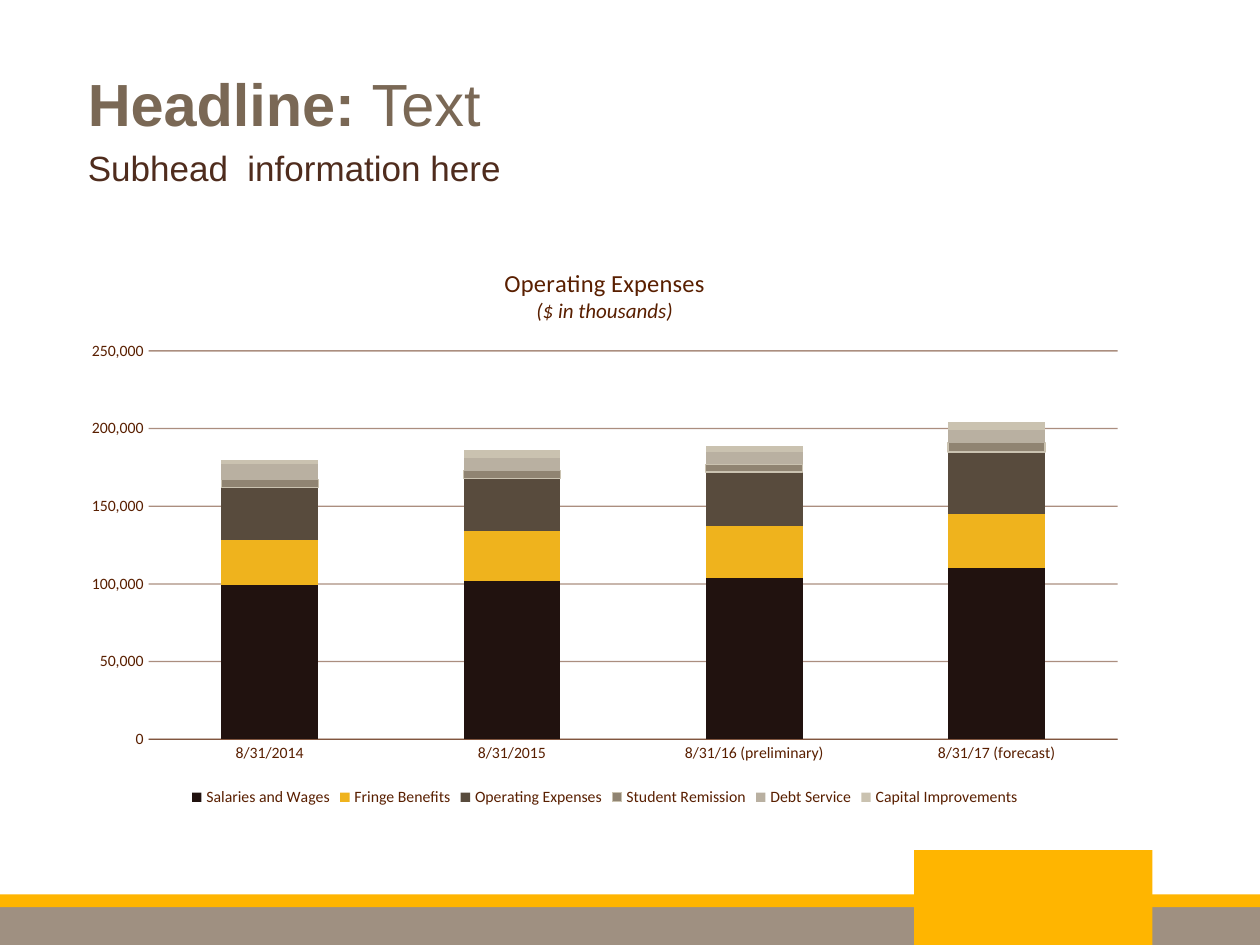
"""Build a slide with a stacked column chart of operating expenses."""
from dataclasses import dataclass
from typing import Any, Optional

import pptx
import pptx.chart.data
import pptx.dml.color
import pptx.enum.chart
import pptx.enum.shapes
import pptx.enum.text
import pptx.oxml
import pptx.oxml.ns
import pptx.util

Cm, Pt = pptx.util.Cm, pptx.util.Pt

COLORS = {
    "taupe": "9F9081", "gold": "FFB500", "headline": "7A6855", "subhead": "4F2C1D",
    "chart_text": "591F00", "espresso": "21120F", "amber": "EFB31D", "brown": "584B3D",
    "stone": "908472", "sand": "B9B0A1", "cream": "CAC2B0",
}


@dataclass
class Band:
    left: float
    top: float
    width: float
    height: float
    color: str


@dataclass
class Run:
    text: str
    size: float
    color: str
    name: str = "Arial"
    bold: bool = False
    italic: bool = False


@dataclass
class Series:
    name: str
    thousands: tuple[int, ...]
    color: str
    outline: Optional[str] = None


BANDS = [
    Band(0, 18.26, 25.4, 0.79, "taupe"),
    Band(0, 18.03, 25.4, 0.26, "gold"),
    Band(18.43, 17.14, 4.8, 1.92, "gold"),
]
CATEGORIES = ["8/31/2014", "8/31/2015", "8/31/16 (preliminary)", "8/31/17 (forecast)"]
SERIES = [
    Series("Salaries and Wages", (99, 102, 104, 110), "espresso"),
    Series("Fringe Benefits", (29, 32, 33, 35), "amber"),
    Series("Operating Expenses", (34, 34, 35, 40), "brown"),
    Series("Student Remission", (5, 5, 5, 6), "stone", "cream"),
    Series("Debt Service", (10, 8, 8, 8), "sand"),
    Series("Capital Improvements", (3, 5, 4, 5), "cream"),
]


def rgb(color: str) -> pptx.dml.color.RGBColor:
    """Return the named colour."""
    return pptx.dml.color.RGBColor.from_string(COLORS[color])


def set_all(target: Any, values: dict[str, Any]) -> None:
    """Set each named attribute on the target."""
    for name, value in values.items():
        setattr(target, name, value)


def style_font(font: Any, size: float, color: str, name: str, **extra: bool) -> None:
    """Set size, typeface, colour and emphasis of a font."""
    set_all(font, {"size": Pt(size), "name": name, **extra})
    font.color.rgb = rgb(color)


def add_run(p: Any, run: Run) -> None:
    """Append a styled run to a paragraph."""
    r = p.add_run()
    r.text = run.text
    style_font(r.font, run.size, run.color, run.name, bold=run.bold, italic=run.italic)


def add_band(s: Any, band: Band) -> None:
    """Draw a plain filled rectangle."""
    box = (Cm(v) for v in (band.left, band.top, band.width, band.height))
    sp = s.shapes.add_shape(pptx.enum.shapes.MSO_SHAPE.RECTANGLE, *box)
    sp.shadow.inherit = False
    sp.fill.solid()
    sp.fill.fore_color.rgb = rgb(band.color)
    sp.line.fill.background()


def add_text(s: Any, top: float, width: float, height: float, runs: list[Run],
             **values: Any) -> None:
    """Add a one-paragraph text box on the left margin."""
    tf = s.shapes.add_textbox(Cm(1.52), Cm(top), Cm(width), Cm(height)).text_frame
    set_all(tf, {"word_wrap": True, "vertical_anchor": pptx.enum.text.MSO_ANCHOR.TOP})
    set_all(tf.paragraphs[0], values)
    for run in runs:
        add_run(tf.paragraphs[0], run)


def style_line(line: Any) -> None:
    """Make a chart line thin and half transparent."""
    line.width = Pt(0.75)
    line.color.rgb = rgb("chart_text")
    clr = line.fill._xPr.find(".//" + pptx.oxml.ns.qn("a:srgbClr"))
    clr.append(pptx.oxml.parse_xml(
        f'<a:alpha {pptx.oxml.ns.nsdecls("a")} val="50000"/>'))


def style_axes(chart: Any) -> None:
    """Format both axes and the gridlines."""
    for axis in (chart.category_axis, chart.value_axis):
        set_all(axis, {"major_tick_mark": pptx.enum.chart.XL_TICK_MARK.NONE,
                       "minor_tick_mark": pptx.enum.chart.XL_TICK_MARK.NONE})
        style_font(axis.tick_labels.font, 9, "chart_text", "Calibri")
    style_line(chart.category_axis.format.line)
    axis = chart.value_axis
    set_all(axis, {"minimum_scale": 0, "maximum_scale": 250000, "major_unit": 50000,
                   "has_major_gridlines": True})
    style_line(axis.major_gridlines.format.line)
    axis.format.line.fill.background()
    set_all(axis.tick_labels, {"number_format": "#,##0", "number_format_is_linked": False})


def add_expenses_chart(s: Any) -> None:
    """Add the stacked column chart with its title and legend."""
    data = pptx.chart.data.CategoryChartData(number_format="#,##0")
    data.categories = CATEGORIES
    for item in SERIES:
        data.add_series(item.name, [v * 1000 for v in item.thousands])
    chart = s.shapes.add_chart(pptx.enum.chart.XL_CHART_TYPE.COLUMN_STACKED,
                               Cm(1.42), Cm(4.93), Cm(21.54), Cm(11.43), data).chart
    style_font(chart.font, 10, "chart_text", "Calibri")
    set_all(chart, {"has_title": True, "has_legend": True})
    tf = chart.chart_title.text_frame
    add_run(tf.paragraphs[0], Run("Operating Expenses", 14, "chart_text", "Calibri"))
    add_run(tf.add_paragraph(),
            Run("($ in thousands)", 12, "chart_text", "Calibri", italic=True))
    set_all(chart.legend, {"position": pptx.enum.chart.XL_LEGEND_POSITION.BOTTOM,
                           "include_in_layout": False})
    style_font(chart.legend.font, 9, "chart_text", "Calibri")
    style_axes(chart)
    plot = chart.plots[0]
    set_all(plot, {"gap_width": 150, "overlap": 100, "vary_by_categories": False})
    for item, series in zip(SERIES, plot.series):
        series.format.fill.solid()
        series.format.fill.fore_color.rgb = rgb(item.color)
        if item.outline:
            series.format.line.width = Pt(0.75)
            series.format.line.color.rgb = rgb(item.outline)
        else:
            series.format.line.fill.background()


def main() -> None:
    """Build and save the slide."""
    prs = pptx.Presentation()
    set_all(prs, {"slide_width": Cm(25.4), "slide_height": Cm(19.05)})
    s = prs.slides.add_slide(prs.slide_layouts[6])
    for band in BANDS:
        add_band(s, band)
    add_expenses_chart(s)
    add_text(s, 1.4, 22.86, 2.01, [Run("Headline: ", 34, "headline", bold=True),
                                   Run("Text", 34, "headline")], line_spacing=0.9)
    add_text(s, 2.82, 9.35, 1.12, [Run("Subhead  information here", 20, "subhead")])
    prs.save("out.pptx")


if __name__ == "__main__":
    main()
